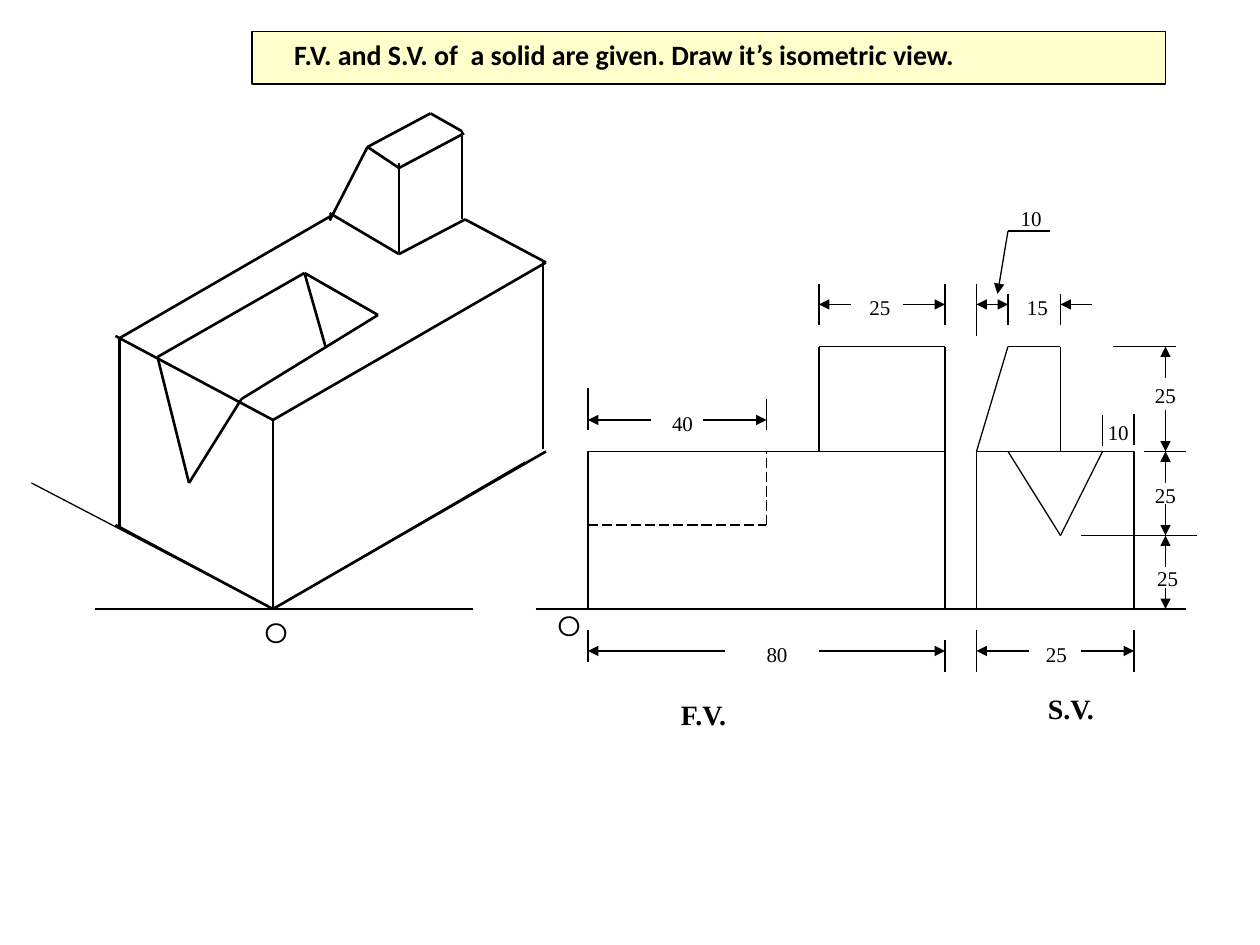
from lxml import etree
from pptx import Presentation
from pptx.dml.color import RGBColor
from pptx.enum.dml import MSO_LINE
from pptx.enum.shapes import MSO_CONNECTOR, MSO_SHAPE
from pptx.enum.text import MSO_ANCHOR, MSO_AUTO_SIZE, PP_ALIGN
from pptx.oxml.ns import qn
from pptx.util import Inches, Pt

BLACK = RGBColor(0, 0, 0)
WHITE = RGBColor(255, 255, 255)
CREAM = RGBColor(255, 255, 204)
STRAIGHT = MSO_CONNECTOR.STRAIGHT
RECT = MSO_SHAPE.RECTANGLE
DASH = MSO_LINE.LONG_DASH
LEFT, CENTER = PP_ALIGN.LEFT, PP_ALIGN.CENTER
TOP, NO_FIT = MSO_ANCHOR.TOP, MSO_AUTO_SIZE.NONE
SERIF, SANS, ROUND = "Times New Roman", "Calibri", "Montserrat"
THIN, THICK = 0.75, 1.5
COLS, ROWS = 120, 90  # twelve grid units to the inch


def unit(value):
    return Inches(value / 12)


def write(frame, text, font=SERIF, size=12, bold=False, align=CENTER):
    para = frame.paragraphs[0]
    para.alignment = align
    run = para.add_run()
    run.text = text
    run.font.name = font
    run.font.size = Pt(size)
    run.font.bold = bold
    run.font.color.rgb = BLACK


class Sheet:
    """Drawing sheet whose lengths are all in grid units."""

    def __init__(self, slide):
        self.slide = slide
        self.shapes = slide.shapes

    def paint(self, shape, fill):
        shape.fill.solid()
        shape.fill.fore_color.rgb = fill
        shape.line.color.rgb = BLACK
        shape.line.width = Pt(THIN)

    def title(self, text, x, y, w, h):
        box = self.shapes.title
        box.left, box.top, box.width, box.height = map(unit, (x, y, w, h))
        self.paint(box, CREAM)
        frame = box.text_frame
        frame.auto_size = NO_FIT
        frame.vertical_anchor = TOP
        frame.margin_left = unit(4)
        frame.margin_top = Inches(0.05)
        write(frame, text, font=SANS, size=16, bold=True, align=LEFT)

    def line(self, start, end, width=THIN, dash=None, ends=()):
        """Draw one line; ends may hold headEnd and tailEnd."""
        line = self.shapes.add_connector(STRAIGHT, *map(unit, start + end))
        line.line.color.rgb = BLACK
        line.line.width = Pt(width)
        if dash:
            line.line.dash_style = dash
        props = line.line._get_or_add_ln()
        for name in ends:
            etree.SubElement(props, qn("a:" + name), type="triangle")
        etree.SubElement(line._element.spPr, qn("a:effectLst"))

    def chain(self, *points, **style):
        for start, end in zip(points, points[1:]):
            self.line(start, end, **style)

    def arrow(self, start, end):
        self.line(start, end, ends=("tailEnd",))

    def box(self, x, y, w, h):
        shape = self.shapes.add_shape(RECT, *map(unit, (x, y, w, h)))
        shape.shadow.inherit = False
        self.paint(shape, WHITE)

    def label(self, text, x, y, w=4.4, h=3.6, **style):
        """Place text centred on a grid point."""
        spot = map(unit, (x - w / 2, y - h / 2, w, h))
        frame = self.shapes.add_textbox(*spot).text_frame
        frame.word_wrap = False
        write(frame, text, **style)


def draw_solid(sheet):
    sheet.line((9, 58), (45, 58))
    sheet.line((26, 58), (50, 44))
    sheet.line((26, 58), (3, 46))
    edges = [
        # block
        [(11, 50), (26, 58), (52, 43)],
        [(26, 58), (26, 40), (52, 25), (44.3, 20.9)],
        [(51.7, 42.8), (51.7, 24.8)],
        [(26, 40), (11, 32)],
        [(11.4, 50.2), (11.4, 32.2), (31.8, 20.4)],
        # groove
        [(29, 26), (15, 34), (18, 46), (23, 38), (36, 30), (29, 26), (31, 33)],
        # upright
        [(31.4, 20.3), (38, 24.2), (44.3, 20.9)],
        [(31.4, 21), (35, 14), (38, 16), (44.2, 12.7)],
        [(35, 14), (41, 10.8), (44, 12.5), (44, 20.9)],
        [(38, 24), (38, 15.5)],
    ]
    for edge in edges:
        sheet.chain(*edge, width=THICK)
    sheet.label("O", 26.3, 60.2, 4.7, 4.4, font=ROUND, size=16)


def draw_views(sheet):
    sheet.chain((56, 43), (56, 58), (90, 58), (90, 33), (78, 33), (78, 43))
    sheet.line((56, 43), (90, 43))
    sheet.chain((56, 50), (73, 50), (73, 43), dash=DASH)
    sheet.box(93, 43, 15, 15)
    sheet.chain((93, 43), (96, 33), (101, 33), (101, 43))
    sheet.chain((96, 43), (101, 51), (105, 43))
    sheet.line((51, 58), (113, 58))
    sheet.label("O", 54.2, 59.6, 4.7, 4.4, font=ROUND, size=16)
    for text, x, y in [("F.V.", 67, 68), ("S.V.", 102, 67.5)]:
        sheet.label(text, x, y, 7.3, 4.4, size=16, bold=True)


def draw_sizes(sheet):
    stems = [  # x, top, bottom
        (56, 37, 41), (73, 38, 41), (78, 27, 31), (90, 27, 31),
        (93, 27, 32), (96, 28, 31), (101, 28, 31), (105, 39.5, 42.5),
        (108, 39.4, 42.4), (56, 60, 63), (90, 61, 64), (93, 60, 64),
        (108, 60, 64),
    ]
    for x, top, end in stems:
        sheet.line((x, top), (x, end))
    for y, left, right in [(33, 106, 112), (43, 109, 113), (51, 103, 114)]:
        sheet.line((left, y), (right, y))

    across = [  # y, from, to
        (40, 62, 56), (40, 67, 73), (29, 81, 78), (29, 86, 90),
        (29, 104, 101), (62, 69, 56), (62, 78, 90), (62, 98, 93),
        (62, 103, 108),
    ]
    for y, start, end in across:
        sheet.arrow((start, y), (end, y))
    for start, end in [(36, 33), (39, 43), (46, 43), (48, 51), (54, 51), (56, 58)]:
        sheet.arrow((111, start), (111, end))
    sheet.line((93, 29), (96, 29), ends=("headEnd", "tailEnd"))
    sheet.arrow((96, 22), (95, 28))
    sheet.line((96, 22), (100, 22))

    sizes = [
        ("10", 98.2, 20.8), ("40", 65, 40.3), ("25", 83.8, 29.3),
        ("15", 98.8, 29.3), ("25", 111, 37.6), ("25", 111, 47.2),
        ("25", 111.2, 55.1), ("25", 100.6, 62.3), ("80", 74, 62.3),
        ("10", 106.5, 41.2),
    ]
    for text, x, y in sizes:
        sheet.label(text, x, y)


def main():
    deck = Presentation()
    deck.slide_width, deck.slide_height = unit(COLS), unit(ROWS)
    sheet = Sheet(deck.slides.add_slide(deck.slide_layouts[5]))
    draw_solid(sheet)
    draw_views(sheet)
    draw_sizes(sheet)
    sheet.title("F.V. and S.V. of  a solid are given. Draw it’s isometric view.",
                24, 3, 87, 5)
    deck.save("out.pptx")


if __name__ == "__main__":
    main()
